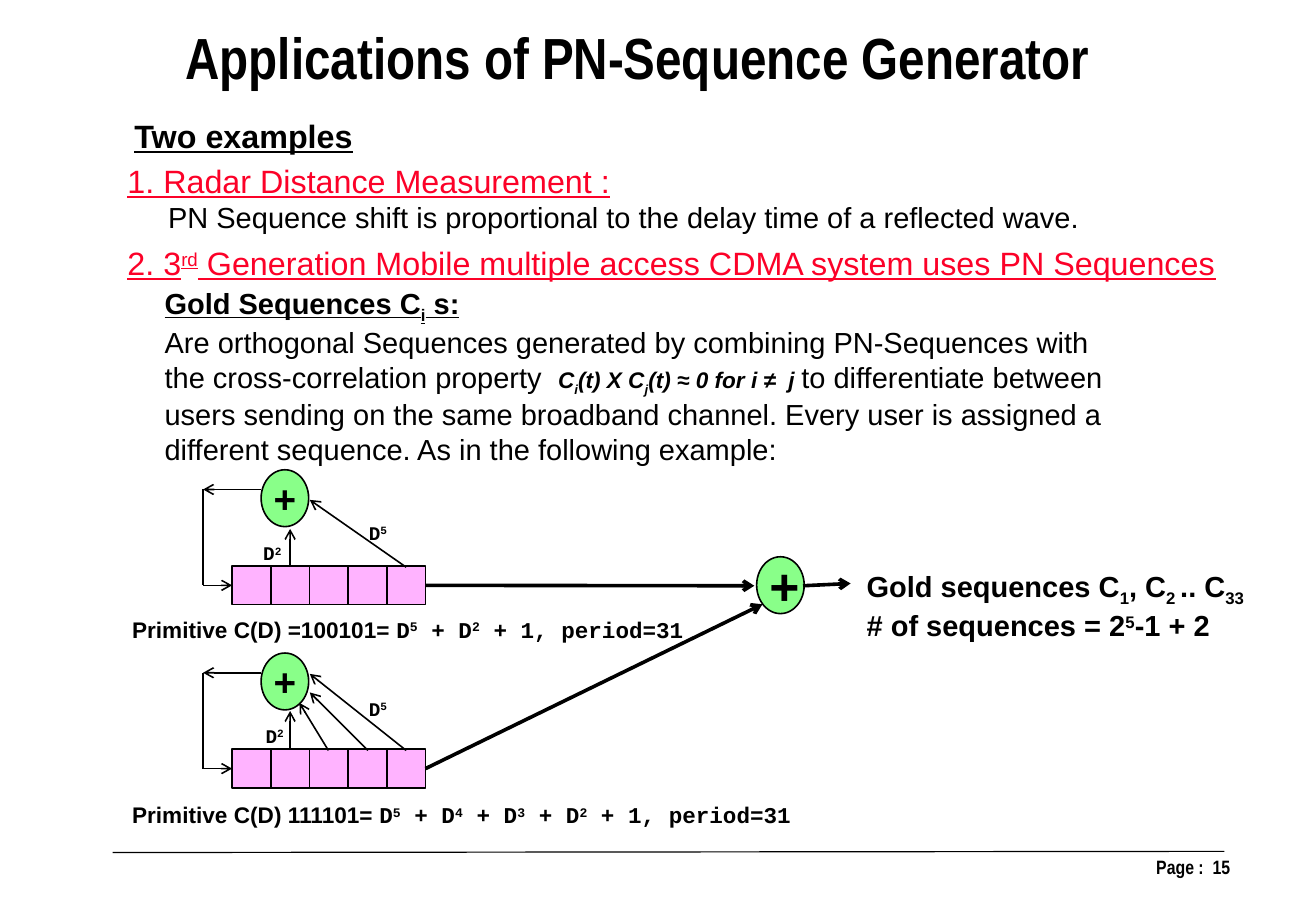
import dataclasses
import typing

import lxml.etree
import pptx
import pptx.dml.color
import pptx.enum.shapes
import pptx.enum.text
import pptx.oxml.ns
import pptx.util

Inches = pptx.util.Inches
Pt = pptx.util.Pt
ALIGN = pptx.enum.text.PP_ALIGN
SHAPE = pptx.enum.shapes.MSO_SHAPE

COLORS = {"ink": "000000", "red": "FC0128", "cell": "FFB3FF", "adder": "89FF89"}
SUPER, SUB = 30, -25
CELLS, CELL = 5, 1 / 3
REGISTER_LEFT, FEEDBACK_X = 2.0, 1.75
REGISTER_RIGHT = REGISTER_LEFT + CELLS * CELL
ADDER_W, ADDER_H = 0.41, 0.49

Format = dict[str, typing.Any]
Point = tuple[float, float]

BODY: Format = {"name": "Arial", "size": Pt(18)}
BOLD: Format = BODY | {"bold": True}
HEADING: Format = BODY | {"size": Pt(20), "underline": True}
FORMULA: Format = BOLD | {"size": Pt(14), "italic": True}
CAPTION: Format = BOLD | {"size": Pt(14)}
POLYNOMIAL: Format = CAPTION | {"name": "Courier New"}
TAP_LABEL: Format = POLYNOMIAL | {"size": Pt(12)}
TITLE: Format = {"name": "Arial Narrow", "size": Pt(36), "bold": True}
FOOTER: Format = TITLE | {"size": Pt(12)}


@dataclasses.dataclass
class Run:
    text: str
    style: Format
    base: int = 0
    color: str = "ink"


@dataclasses.dataclass
class Line:
    runs: list[Run]
    align: typing.Any = ALIGN.LEFT
    indent: float = 0


@dataclasses.dataclass
class Label:
    left: float
    top: float
    width: float
    height: float
    lines: list[Line]
    wrap: bool = False


@dataclasses.dataclass
class Register:
    top: float
    taps: list[tuple[Point, Point]]
    d2: Point
    d5: Point
    output: Point


def scripted(text: str, style: Format, base: int = SUPER, color: str = "ink") -> list[Run]:
    return [Run(part, style, base if i % 2 else 0, color)
            for i, part in enumerate(text.split("|")) if part]


def rgb(name: str) -> pptx.dml.color.RGBColor:
    return pptx.dml.color.RGBColor.from_string(COLORS[name])


def fill_line(p: typing.Any, line: Line) -> None:
    p.alignment = line.align
    if line.indent:
        p._p.get_or_add_pPr().set("marL", str(Inches(line.indent)))
    for run in line.runs:
        r = p.add_run()
        r.text = run.text
        for key, value in run.style.items():
            setattr(r.font, key, value)
        r.font.color.rgb = rgb(run.color)
        if run.base:
            r._r.get_or_add_rPr().set("baseline", str(run.base * 1000))


def add_label(s: typing.Any, label: Label) -> None:
    box = map(Inches, (label.left, label.top, label.width, label.height))
    tf = s.shapes.add_textbox(*box).text_frame
    tf.word_wrap = label.wrap
    for i, line in enumerate(label.lines):
        fill_line(tf.add_paragraph() if i else tf.paragraphs[0], line)


def add_block(s: typing.Any, kind: typing.Any, left: float, top: float,
              width: float, height: float, fill: str) -> typing.Any:
    sp = s.shapes.add_shape(kind, *map(Inches, (left, top, width, height)))
    sp.shadow.inherit = False
    sp.fill.solid()
    sp.fill.fore_color.rgb = rgb(fill)
    sp.line.color.rgb = rgb("ink")
    sp.line.width = Pt(1)
    return sp


def add_adder(s: typing.Any, left: float, top: float, size: int, shift: float = 0) -> None:
    sp = add_block(s, SHAPE.OVAL, left, top, ADDER_W, ADDER_H, "adder")
    tf = sp.text_frame
    insets = {"margin_left": Inches(shift), "margin_right": 0, "margin_top": 0,
              "margin_bottom": 0, "word_wrap": False,
              "vertical_anchor": pptx.enum.text.MSO_ANCHOR.MIDDLE}
    for key, value in insets.items():
        setattr(tf, key, value)
    fill_line(tf.paragraphs[0], Line([Run("+", BOLD | {"size": Pt(size)})], ALIGN.CENTER))


def add_wire(s: typing.Any, start: Point, end: Point, width: float = 1,
             arrow: bool = True) -> None:
    sp = s.shapes.add_connector(pptx.enum.shapes.MSO_CONNECTOR.STRAIGHT,
                                *map(Inches, (*start, *end)))
    sp.line.color.rgb = rgb("ink")
    sp.line.width = Pt(width)
    qn = pptx.oxml.ns.qn
    if arrow:
        lxml.etree.SubElement(sp.line._get_or_add_ln(), qn("a:tailEnd"), type="arrow")
    lxml.etree.SubElement(sp._element.spPr, qn("a:effectLst"))


def add_register(s: typing.Any, reg: Register) -> None:
    top, middle, feedback = reg.top, reg.top + CELL / 2, reg.top - 0.66
    for i in range(CELLS):
        add_block(s, SHAPE.RECTANGLE, REGISTER_LEFT + i * CELL, top, CELL, CELL, "cell")
    add_adder(s, 2.25, top - 0.83, 24)
    for start, end in reg.taps:
        add_wire(s, start, end)
    add_wire(s, (2.25, feedback), (FEEDBACK_X, feedback))
    add_wire(s, (FEEDBACK_X, feedback), (FEEDBACK_X, middle), arrow=False)
    add_wire(s, (FEEDBACK_X, middle), (REGISTER_LEFT, middle))
    add_wire(s, (REGISTER_RIGHT, middle), reg.output, 2.25)
    for (left, y), power in ((reg.d2, 2), (reg.d5, 5)):
        add_label(s, Label(left, y, 0.37, 0.31, [Line(scripted(f"D|{power}|", TAP_LABEL))]))


LABELS = [
    Label(8.14, 7.32, 2.56, 0.3, [Line([Run("Page :  15", FOOTER)], ALIGN.RIGHT)], True),
    Label(1.46, 0.14, 8.07, 0.71,
          [Line([Run("Applications of PN-Sequence Generator", TITLE)], ALIGN.CENTER)]),
    Label(1.06, 0.95, 2.09, 0.44, [Line([Run("Two examples", HEADING | {"bold": True})])]),
    Label(1, 1.34, 8.61, 0.74, [
        Line([Run("1. Radar Distance Measurement :", HEADING, color="red")]),
        Line([Run("PN Sequence shift is proportional to the delay time of a reflected wave.",
                  BODY)], indent=0.35)]),
    Label(1, 2.05, 9.67, 0.44, [Line(scripted(
        "2. 3|rd| Generation Mobile multiple access CDMA system uses PN Sequences",
        HEADING, color="red"))]),
    Label(1.32, 2.41, 8.78, 1.62, [
        Line(scripted("Gold Sequences C|i| s:", BOLD | {"underline": True}, SUB)),
        Line([Run("Are orthogonal Sequences generated by combining PN-Sequences with", BODY)]),
        Line([Run("the cross-correlation property  ", BODY),
              *scripted("C|i|(t) X C|j|(t) ≈ 0 for i ≠  j ", FORMULA, SUB),
              Run("to differentiate between", BODY)]),
        Line([Run("users sending on the same broadband channel. Every user is assigned a "
                  "different sequence. As in the following example:", BODY)])], True),
    Label(1.04, 5.26, 4.99, 0.34, [Line([
        Run("Primitive C(D) =100101= ", CAPTION),
        *scripted("D|5| + D|2| + 1, period=31", POLYNOMIAL)])]),
    Label(1.04, 6.86, 5.89, 0.34, [Line([
        Run("Primitive C(D) 111101= ", CAPTION),
        *scripted("D|5| + D|4| + D|3| + D|2| + 1, period=31", POLYNOMIAL)])]),
    Label(7.37, 4.85, 3.67, 1.01, [
        Line(scripted("Gold sequences C|1|, C|2 |.. C|33|", BOLD, SUB)),
        Line(scripted("# of sequences = 2|5|-1 + 2", BOLD))], True),
]

REGISTERS = [
    Register(4.88, [((3.5, 4.89), (2.67, 4.31)), ((2.5, 4.89), (2.5, 4.56))],
             (2.17, 4.62), (3.08, 4.44), (6.5, 5.05)),
    Register(6.46, [((3.5, 6.47), (2.67, 5.81)), ((2.5, 6.46), (2.5, 6.13)),
                    ((2.83, 6.47), (2.58, 6.06)), ((3.17, 6.47), (2.67, 5.97))],
             (2.19, 6.19), (3.08, 5.96), (6.57, 5.21)),
]


def main() -> None:
    prs = pptx.Presentation()
    prs.slide_width, prs.slide_height = Inches(11.34), Inches(7.88)
    s = prs.slides.add_slide(prs.slide_layouts[6])
    add_wire(s, (0.97, 7.35), (10.55, 7.34), 0.75, arrow=False)
    for reg in REGISTERS:
        add_register(s, reg)
    add_adder(s, 6.52, 4.8, 32, 0.07)
    add_wire(s, (6.92, 5.05), (7.33, 5.03), 2.25)
    for label in LABELS:
        add_label(s, label)
    prs.save("out.pptx")


if __name__ == "__main__":
    main()
